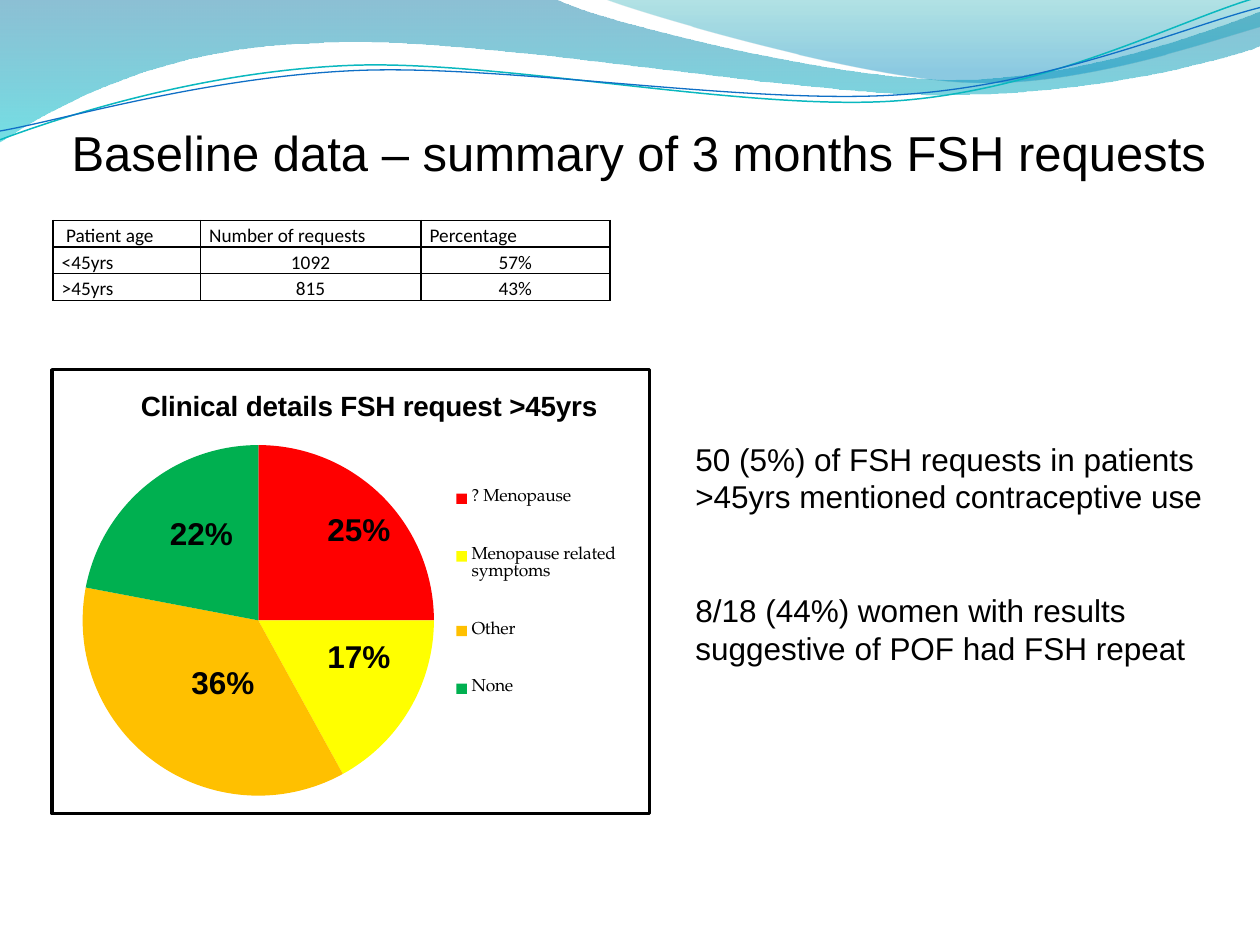
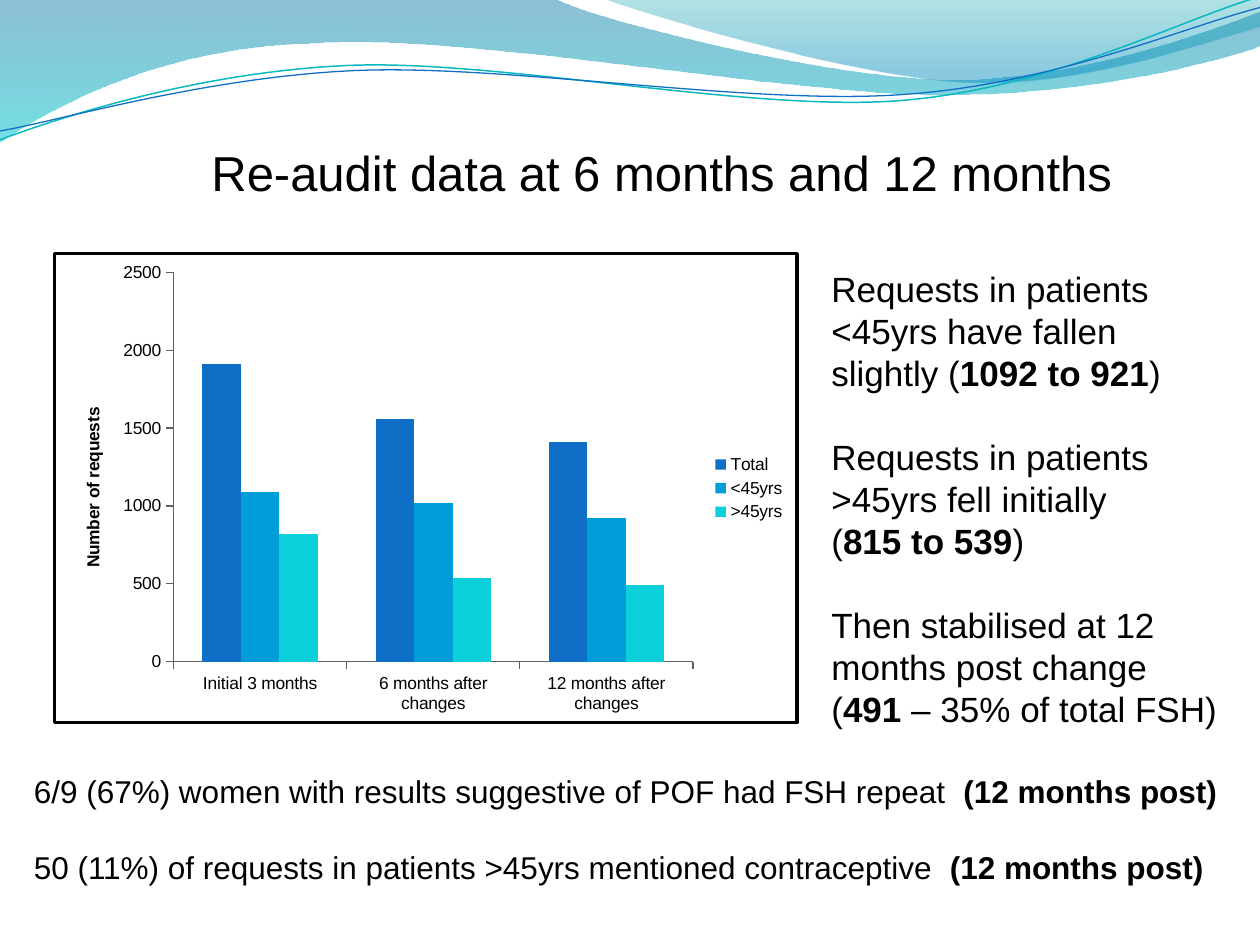
from lxml import etree
from pptx import Presentation
from pptx.chart.data import CategoryChartData
from pptx.dml.color import RGBColor
from pptx.enum.chart import XL_CHART_TYPE as CT, XL_LEGEND_POSITION as LP, XL_TICK_MARK as TM
from pptx.enum.text import MSO_AUTO_SIZE as AUTO, PP_ALIGN as AL
from pptx.oxml import parse_xml
from pptx.oxml.ns import nsdecls, qn
from pptx.util import Inches, Pt

BLACK = RGBColor(0x00, 0x00, 0x00)
AXIS_GREY = RGBColor(0x60, 0x60, 0x60)
DEEP_BLUE = RGBColor(0x00, 0x74, 0xA1)
AQUA = RGBColor(0x00, 0xC6, 0xCF)
TEAL = RGBColor(0x00, 0xA1, 0xA9)
MID_BLUE = RGBColor(0x00, 0x8B, 0xBF)
LINE_TEAL = RGBColor(0x0A, 0xB8, 0xBF)
BLUE = RGBColor(0x0F, 0x6F, 0xC6)
SKY = RGBColor(0x00, 0x9D, 0xD9)
CYAN = RGBColor(0x0B, 0xD0, 0xD9)
RED = RGBColor(0xFF, 0x00, 0x00)
YELLOW = RGBColor(0xFF, 0xFF, 0x00)
ORANGE = RGBColor(0xFF, 0xC0, 0x00)
GREEN = RGBColor(0x00, 0xB0, 0x50)

FONT = "Arial"
TABLE_FONT = "Calibri"
LEGEND_FONT = "TeX Gyre Pagella"
LINE_FACTOR = 1.2

# Band outlines: a point is a straight step, a six-tuple a Bézier curve
BANDS = [
    ([(0, 0), (4.4, -0.01), (4.76, 0.17, 6.64, 0.63, 7.58, 0.63),
      (8.53, 0.63, 9.58, 0.26, 10, 0.09), (10.01, 0.36),
      (9.83, 0.44, 8.7, 0.76, 7.46, 0.75), (6.22, 0.75, 3.82, 0.28, 2.57, 0.34),
      (1.29, 0.36, 0.46, 0.83, -0.01, 1.13), (0, 0)],
     [(0, DEEP_BLUE, 45), (1, AQUA, 55)]),
    ([(4.79, -0.01), (5.09, 0.11, 6.82, 0.62, 7.69, 0.65),
      (8.56, 0.69, 9.61, 0.32, 10, 0.21), (10, 0), (4.79, -0.01)],
     [(0, TEAL, 30), (0.8, MID_BLUE, 45)]),
]
WAVE_LINES = [
    ([(0, 1.11), (0.48, 0.93, 1.58, 0.57, 2.77, 0.52),
      (3.95, 0.47, 5.93, 0.89, 7.13, 0.8), (8.33, 0.71, 9.38, 0.15, 9.98, -0.02)],
     LINE_TEAL, 0.85),
    ([(0, 1.04), (0.47, 0.96, 1.64, 0.61, 2.83, 0.56),
      (4.03, 0.51, 5.97, 0.84, 7.17, 0.75), (8.36, 0.67, 9.41, 0.21, 10, 0.06)],
     BLUE, 0.75),
]


# ---- Shared background ----
def add_outline(slide, steps, close):
    """Build the control polygon, then join each curve's three points."""
    points = [(Inches(step[i]), Inches(step[i + 1]))
              for step in steps for i in range(0, len(step), 2)]
    builder = slide.shapes.build_freeform(*points[0])
    builder.add_line_segments(points[1:], close=close)
    sp = builder.convert_to_shape()
    sp.shadow.inherit = False
    segments = iter(list(sp.element.iter(qn("a:lnTo"))))
    for step in steps[1:]:
        segment = next(segments)
        if len(step) == 6:
            segment.tag = qn("a:cubicBezTo")
            for _ in range(2):
                extra = next(segments)
                segment.append(extra[0])
                extra.getparent().remove(extra)
    return sp


def add_waves(slide):
    for steps, stops in BANDS:
        sp = add_outline(slide, steps, True)
        sp.line.fill.background()
        sp.fill.gradient()
        sp.fill.gradient_angle = 270
        for stop, (position, color, _) in zip(sp.fill.gradient_stops, stops):
            stop.position = position
            stop.color.rgb = color
        gradient = sp.element.spPr.find(qn("a:gradFill"))
        for clr, (_, _, opacity) in zip(gradient.iter(qn("a:srgbClr")), stops):
            etree.SubElement(clr, qn("a:alpha")).set("val", str(opacity * 1000))
    for steps, color, width in WAVE_LINES:
        sp = add_outline(slide, steps, False)
        sp.fill.background()
        sp.line.color.rgb = color
        sp.line.width = Pt(width)


# ---- Text ----
def style_font(font, size, name=FONT, bold=False):
    font.name, font.size, font.bold = name, Pt(size), bold
    font.color.rgb = BLACK


def add_text(slide, box, size, paragraphs, wrap=True, bold=False):
    """Each paragraph is (lines of space before, runs); every second run is bold."""
    tb = slide.shapes.add_textbox(*map(Inches, box))
    tf = tb.text_frame
    tf.word_wrap = wrap
    tf.auto_size = AUTO.SHAPE_TO_FIT_TEXT
    for i, (gap, runs) in enumerate(paragraphs):
        p = tf.add_paragraph() if i else tf.paragraphs[0]
        p.line_spacing = Pt(size * LINE_FACTOR)
        p.space_before = Pt(size * LINE_FACTOR * gap)
        for j, text in enumerate(runs):
            r = p.add_run()
            r.text = text
            style_font(r.font, size, bold=bold or j % 2 == 1)


def add_title(slide, box, text):
    add_text(slide, box, 28, [(0, [text])], wrap=False)


# ---- Table ----
def add_age_table(slide, box):
    rows = [(" Patient age", "Number of requests", "Percentage"),
            ("<45yrs", "1092", "57%"),
            (">45yrs", "815", "43%")]
    table = slide.shapes.add_table(len(rows), 3, *map(Inches, box)).table
    table.first_row = table.horz_banding = False
    for column, width in zip(table.columns, (1.17, 1.75, 1.5)):
        column.width = Inches(width)
    for i, row in enumerate(rows):
        table.rows[i].height = Inches(box[3] / len(rows))
        for j, text in enumerate(row):
            cell = table.cell(i, j)
            cell.margin_left = cell.margin_right = Inches(0.07)
            cell.margin_top = cell.margin_bottom = 0
            p = cell.text_frame.paragraphs[0]
            p.line_spacing = 1.15
            p.alignment = AL.CENTER if i and j else AL.LEFT
            r = p.add_run()
            r.text = text
            style_font(r.font, 11, TABLE_FONT)
            tc_pr = cell._tc.get_or_add_tcPr()
            for side in ("lnL", "lnR", "lnT", "lnB"):
                tc_pr.append(parse_xml(
                    f'<a:{side} {nsdecls("a")} w="12700"><a:solidFill>'
                    f'<a:srgbClr val="{BLACK}"/></a:solidFill></a:{side}>'))
            cell.fill.background()


# ---- Charts ----
def set_layout(element, index, box, inner=False):
    """Place a chart part; box holds x, y and, if needed, width and height."""
    for old in element.findall(qn("c:layout")):
        element.remove(old)
    target = '<c:layoutTarget val="inner"/>' if inner else ""
    modes = "".join(f'<c:{m}Mode val="edge"/>' for m in "xy")
    sizes = "".join(f'<c:{k} val="{v}"/>' for k, v in zip("xywh", box))
    element.insert(index, parse_xml(
        f'<c:layout {nsdecls("c")}><c:manualLayout>{target}{modes}{sizes}'
        '</c:manualLayout></c:layout>'))


def add_framed_chart(slide, box, kind, categories, series, font, plot_box, legend_box):
    data = CategoryChartData()
    data.categories = categories
    for name, values in series:
        data.add_series(name, values)
    chart = slide.shapes.add_chart(kind, *map(Inches, box), data).chart
    style_font(chart.font, 10, font)
    chart.has_title = False
    chart.has_legend = True
    chart.legend.position = LP.RIGHT
    chart.legend.include_in_layout = False
    style_font(chart.legend.font, 10, font)
    set_layout(chart.legend._element, 1, legend_box)
    chart_el = chart.element.find(qn("c:chart"))
    set_layout(chart_el.find(qn("c:plotArea")), 0, plot_box, inner=True)
    # White panel with a black frame
    chart_el.addnext(parse_xml(
        f'<c:spPr {nsdecls("c", "a")}><a:solidFill><a:srgbClr val="FFFFFF"/></a:solidFill>'
        f'<a:ln w="25400"><a:solidFill><a:srgbClr val="{BLACK}"/></a:solidFill></a:ln></c:spPr>'))
    return chart


def set_heading(text_frame, text, size):
    r = text_frame.paragraphs[0].add_run()
    r.text = text
    style_font(r.font, size, bold=True)


def add_details_pie(slide, box):
    slices = [("? Menopause", 25, RED, (2.1, 1.08)),
              ("Menopause related symptoms", 17, YELLOW, (2.1, 2.09)),
              ("Other", 36, ORANGE, (1.02, 2.29)),
              ("None", 22, GREEN, (0.85, 1.11))]
    chart = add_framed_chart(
        slide, box, CT.PIE, [s[0] for s in slices],
        [("Series 1", [s[1] for s in slices])], LEGEND_FONT,
        (0.05, 0.17, 0.59, 0.79), (0.66, 0.18, 0.3, 0.65))
    chart.has_title = True
    set_heading(chart.chart_title.text_frame, "Clinical details FSH request >45yrs", 16)
    set_layout(chart.chart_title._element, 1, (0.14, 0.03))
    plot = chart.plots[0]
    plot.vary_by_categories = True
    for i, (_, share, color, (dx, dy)) in enumerate(slices):
        fill = plot.series[0].points[i].format.fill
        fill.solid()
        fill.fore_color.rgb = color
        add_text(slide, (box[0] + dx, box[1] + dy, 0.71, 0.4), 18,
                 [(0, [f"{share}%"])], wrap=False, bold=True)


def add_requests_chart(slide, box):
    series = [("Total", (1910, 1560, 1410), BLUE),
              ("<45yrs", (1090, 1020, 920), SKY),
              (">45yrs", (820, 540, 490), CYAN)]
    chart = add_framed_chart(
        slide, box, CT.COLUMN_CLUSTERED,
        ["Initial 3 months", "6 months after changes", "12 months after changes"],
        [s[:2] for s in series], FONT,
        (0.16, 0.04, 0.7, 0.83), (0.88, 0.42, 0.11, 0.16))
    plot = chart.plots[0]
    plot.gap_width, plot.overlap = 150, 0
    plot.vary_by_categories = False
    for ser, (_, _, color) in zip(plot.series, series):
        ser.format.fill.solid()
        ser.format.fill.fore_color.rgb = color
    values = chart.value_axis
    values.minimum_scale, values.maximum_scale, values.major_unit = 0, 2500, 500
    values.has_major_gridlines = False
    set_heading(values.axis_title.text_frame, "Number of requests", 10)
    for axis in (chart.category_axis, values):
        axis.major_tick_mark, axis.minor_tick_mark = TM.OUTSIDE, TM.NONE
        axis.format.line.color.rgb = AXIS_GREY
        style_font(axis.tick_labels.font, 10)


# ---- Slides ----
def new_slide(prs):
    slide = prs.slides.add_slide(prs.slide_layouts[6])
    add_waves(slide)
    return slide


def baseline_slide(prs):
    slide = new_slide(prs)
    add_title(slide, (0.47, 0.92, 9.32, 0.57),
              "Baseline data – summary of 3 months FSH requests")
    add_age_table(slide, (0.42, 1.75, 4.42, 0.63))
    add_details_pie(slide, (0.4, 2.92, 4.77, 3.55))
    add_text(slide, (5.42, 3.44, 4.33, 1.92), 18, [
        (0, ["50 (5%) of FSH requests in patients >45yrs mentioned contraceptive use"]),
        (2, ["8/18 (44%) women with results suggestive of POF had FSH repeat"])])


def reaudit_slide(prs):
    slide = new_slide(prs)
    add_title(slide, (1.58, 1.08, 7.44, 0.57), "Re-audit data at 6 months and 12 months")
    add_requests_chart(slide, (0.42, 2, 5.92, 3.75))
    add_text(slide, (6.5, 2.07, 3.33, 3.8), 20, [
        (0, ["Requests in patients <45yrs have fallen slightly (", "1092 to 921", ")"]),
        (1, ["Requests in patients >45yrs fell initially"]),
        (0, ["(", "815 to 539", ")"]),
        (1, ["Then stabilised at 12 months post change"]),
        (0, ["(", "491", " – 35% of total FSH)"])])
    add_text(slide, (0.17, 6.08, 9.67, 1.01), 18, [
        (0, ["6/9 (67%) women with results suggestive of POF had FSH repeat  ",
             "(12 months post)"]),
        (1, ["50 (11%) of requests in patients >45yrs mentioned contraceptive ",
             " (12 months post)"])])


def main():
    prs = Presentation()
    prs.slide_width, prs.slide_height = Inches(10), Inches(7.5)
    baseline_slide(prs)
    reaudit_slide(prs)
    prs.save("out.pptx")


if __name__ == "__main__":
    main()
